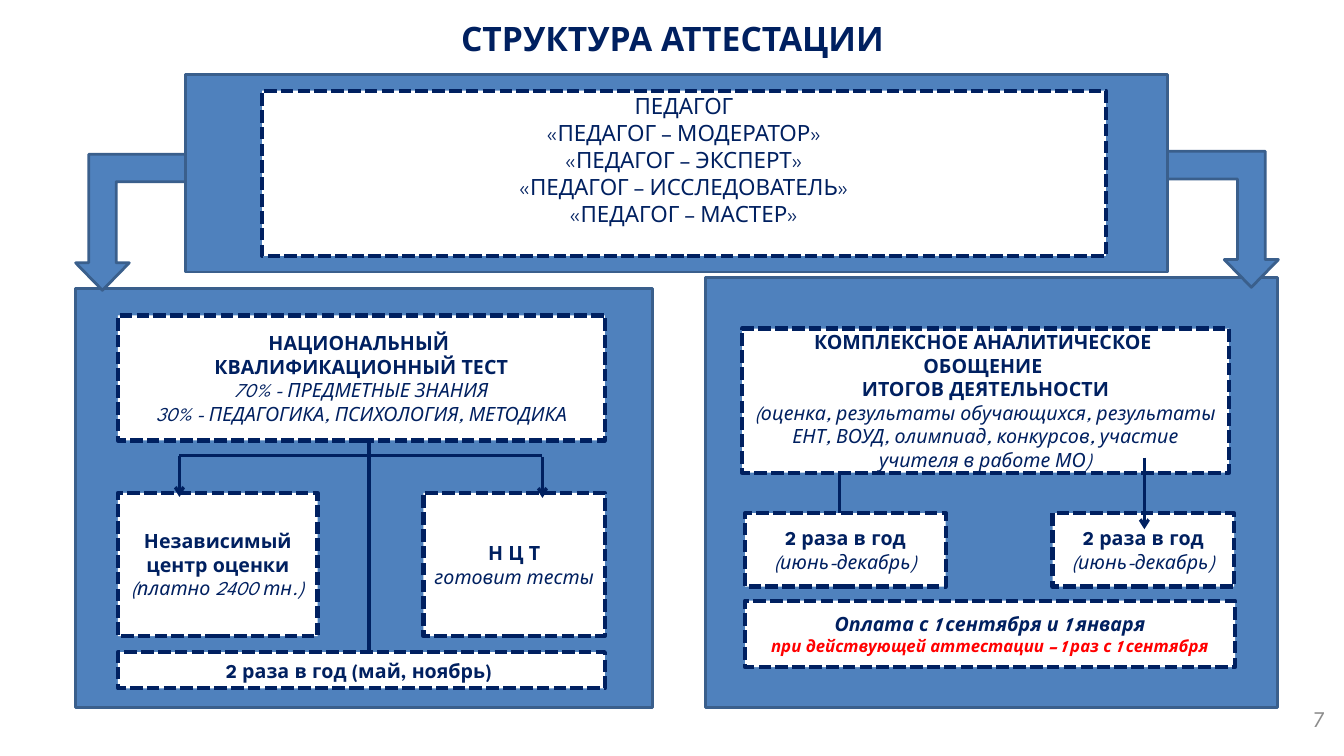
from pptx import Presentation
from pptx.dml.color import RGBColor
from pptx.enum.dml import MSO_LINE
from pptx.enum.shapes import MSO_CONNECTOR, MSO_SHAPE
from pptx.enum.text import MSO_ANCHOR, MSO_AUTO_SIZE, PP_ALIGN
from pptx.oxml.ns import qn
from pptx.util import Inches, Pt
from lxml import etree

FONT = "League Spartan"
NAVY, BLUE, EDGE, WHITE, RED, GRAY = "002060", "4F81BD", "3A5F8C", "FFFFFF", "FF0000", "8C8C8C"

BOLD = dict(size=14, bold=True)
ITALIC = dict(size=14, italic=True)
LEVEL = dict(size=16)
PAYMENT = dict(size=14, bold=True, italic=True)
WARNING = dict(size=12, bold=True, italic=True, color=RED)

TITLE = [("СТРУКТУРА АТТЕСТАЦИИ ", dict(size=24, bold=True))]
PAGE_NUMBER = [("7", dict(size=16, color=GRAY))]
TWICE_A_YEAR = [("2 раза в год", BOLD), ("(июнь-декабрь)", ITALIC)]

COLUMNS = {
    "page": (0.75, 11.93), "number": (10.13, 3.11),
    "top panel": (1.84, 9.74), "levels": (2.6, 8.37),
    "test panel": (0.75, 5.72), "test": (1.17, 4.83),
    "centre": (1.17, 1.98), "authors": (4.2, 1.8),
    "review panel": (7, 5.67), "review": (7.36, 4.83), "payment": (7.39, 4.86),
    "first term": (7.39, 1.99), "second term": (10.44, 1.8),
    "left bend": (0.75, 1.09), "right bend": (11.58, 1.1),
}
ROWS = {
    "title": (0.22, 0.31), "number": (6.93, 0.4),
    "top panel": (0.74, 1.96), "levels": (0.9, 1.64),
    "test panel": (2.86, 4.16), "test": (3.13, 1.24),
    "bodies": (4.89, 1.42), "schedule": (6.47, 0.36),
    "review panel": (2.75, 4.27), "review": (3.26, 1.43),
    "terms": (5.09, 0.73), "payment": (5.96, 0.66),
    "left bend": (1.53, 1.35), "right bend": (1.5, 1.35),
}

PANELS = ["top panel", "test panel", "review panel"]
BENDS = [("left bend", False), ("right bend", True)]

BOXES = [
    ("levels", "levels", [
        ("ПЕДАГОГ", LEVEL),
        ("«ПЕДАГОГ – МОДЕРАТОР»", LEVEL),
        ("«ПЕДАГОГ – ЭКСПЕРТ»", LEVEL),
        ("«ПЕДАГОГ – ИССЛЕДОВАТЕЛЬ»", LEVEL),
        ("«ПЕДАГОГ – МАСТЕР»", LEVEL)]),
    ("test", "test", [
        ("НАЦИОНАЛЬНЫЙ ", BOLD),
        ("КВАЛИФИКАЦИОННЫЙ ТЕСТ", BOLD),
        ("70% - ПРЕДМЕТНЫЕ ЗНАНИЯ", ITALIC),
        ("30% - ПЕДАГОГИКА, ПСИХОЛОГИЯ, МЕТОДИКА", ITALIC)]),
    ("centre", "bodies", [
        ("Независимый центр оценки", BOLD), ("(платно 2400 тн.)", ITALIC)]),
    ("authors", "bodies", [("Н Ц Т", BOLD), ("готовит тесты", ITALIC)]),
    ("test", "schedule", [("2 раза в год (май, ноябрь) ", BOLD)]),
    ("review", "review", [
        ("КОМПЛЕКСНОЕ АНАЛИТИЧЕСКОЕ ", BOLD),
        ("ОБОЩЕНИЕ ", BOLD),
        ("ИТОГОВ ДЕЯТЕЛЬНОСТИ", BOLD),
        ("(оценка, результаты обучающихся, результаты ЕНТ, ВОУД, олимпиад, "
         "конкурсов, участие учителя в работе МО)", ITALIC)]),
    ("first term", "terms", TWICE_A_YEAR),
    ("second term", "terms", TWICE_A_YEAR),
    ("payment", "payment", [
        ("Оплата с 1 сентября и 1 января", PAYMENT),
        ("при действующей аттестации – 1 раз с 1 сентября", WARNING)]),
]
BOTTOM_INSETS = {"levels": 0.32}

LINES_BEHIND = [((3.66, 4.37), (3.66, 6.59), True), ((8.33, 4.68), (8.33, 5.36), True)]
LINES_IN_FRONT = [
    ((1.78, 4.52), (5.38, 4.52), False),
    ((1.78, 4.52), (1.78, 4.93), True),
    ((5.38, 4.53), (5.38, 4.94), True),
    ((11.35, 4.54), (11.35, 5.25), True),
]


def rgb(value):
    return RGBColor.from_string(value)


def area(column, row):
    (left, width), (top, height) = COLUMNS[column], ROWS[row]
    return [Inches(v) for v in (left, top, width, height)]


def write(shape, paragraphs, align=PP_ALIGN.CENTER):
    frame = shape.text_frame
    frame.word_wrap = True
    frame.auto_size = MSO_AUTO_SIZE.NONE
    frame.vertical_anchor = MSO_ANCHOR.MIDDLE
    frame.text = "\n".join(text for text, _ in paragraphs)
    for paragraph, (_, style) in zip(frame.paragraphs, paragraphs):
        paragraph.alignment = align
        font = paragraph.runs[0].font
        font.name = FONT
        font.size = Pt(style["size"])
        font.bold = style.get("bold", False)
        font.italic = style.get("italic", False)
        font.color.rgb = rgb(style.get("color", NAVY))


def add_block(slide, preset, column, row, fill, edge, weight):
    block = slide.shapes.add_shape(preset, *area(column, row))
    block.shadow.inherit = False
    block.fill.solid()
    block.fill.fore_color.rgb = rgb(fill)
    block.line.color.rgb = rgb(edge)
    block.line.width = Pt(weight)
    return block


def add_bend(slide, place, mirrored):
    bend = add_block(slide, MSO_SHAPE.BENT_UP_ARROW, place, place, BLUE, EDGE, 2)
    for index, share in enumerate((0.25, 0.244, 0.25)):
        bend.adjustments[index] = share
    bend.rotation = 180
    if mirrored:
        bend.element.spPr.find(qn("a:xfrm")).set("flipH", "1")


def add_box(slide, column, row, paragraphs):
    box = add_block(slide, MSO_SHAPE.RECTANGLE, column, row, WHITE, NAVY, 3)
    box.line.dash_style = MSO_LINE.SQUARE_DOT
    write(box, paragraphs)
    box.text_frame.margin_bottom = Inches(BOTTOM_INSETS.get(row, 0.05))


def add_line(slide, start, end, arrow):
    points = [Inches(v) for v in start + end]
    line = slide.shapes.add_connector(MSO_CONNECTOR.STRAIGHT, *points)
    line.line.color.rgb = rgb(NAVY)
    line.line.width = Pt(2.25)
    properties = line.element.spPr
    if arrow:
        etree.SubElement(properties.find(qn("a:ln")), qn("a:tailEnd"), type="arrow")
    etree.SubElement(properties, qn("a:effectLst"))


def main():
    deck = Presentation()
    deck.slide_width, deck.slide_height = Inches(13.33), Inches(7.5)
    slide = deck.slides.add_slide(deck.slide_layouts[5])
    title = slide.shapes.title
    title.left, title.top, title.width, title.height = area("page", "title")
    write(title, TITLE)
    for place in PANELS:
        add_block(slide, MSO_SHAPE.RECTANGLE, place, place, BLUE, EDGE, 2)
    for bend in BENDS:
        add_bend(slide, *bend)
    for line in LINES_BEHIND:
        add_line(slide, *line)
    for box in BOXES:
        add_box(slide, *box)
    for line in LINES_IN_FRONT:
        add_line(slide, *line)
    number = slide.shapes.add_textbox(*area("number", "number"))
    write(number, PAGE_NUMBER, PP_ALIGN.RIGHT)
    deck.save("out.pptx")


if __name__ == "__main__":
    main()
